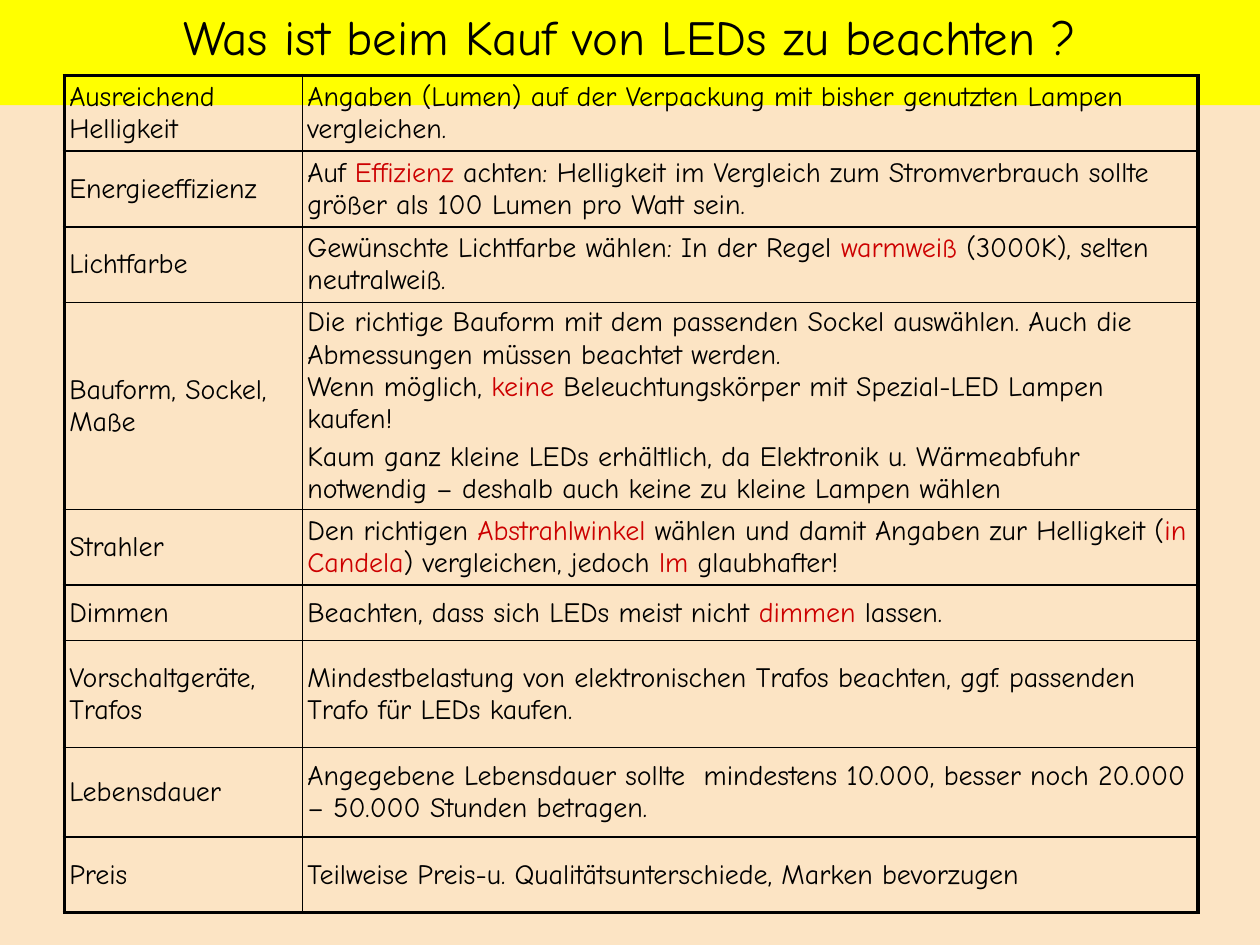
"""Build a one-slide German checklist for buying LED lamps."""
import copy
import dataclasses

import pptx
import pptx.dml.color
import pptx.enum.text
import pptx.oxml
import pptx.oxml.ns
import pptx.util


@dataclasses.dataclass(frozen=True)
class Theme:
    """Hold the colours, type sizes and line widths of the slide."""
    font: str = "Comic Neue"
    title_size: float = 28
    body_size: float = 16
    paragraph_gap: float = 3.2
    background: str = "FCE4C4"
    banner: str = "FFFF00"
    text: str = "000000"
    emphasis: str = "CC0000"
    outer_line: float = 2.25
    inner_line: float = 1


THEME = Theme()
SLIDE_WIDTH = pptx.util.Inches(10)
SLIDE_HEIGHT = pptx.util.Inches(7.5)
CELL_MARGIN = pptx.util.Inches(0.04)
COLUMN_SHARES = (18.9, 71.1)
ROW_SHARES = (8, 8, 8, 8, 8, 5.87, 11.33, 9.47, 8)
TITLE = "Was ist beim Kauf von LEDs zu beachten ?"
CHECKLIST = (
    ("Ausreichend Helligkeit",
     ["Angaben (Lumen) auf der Verpackung mit bisher genutzten Lampen vergleichen."]),
    ("Energieeffizienz",
     ["Auf *Effizienz *achten: Helligkeit im Vergleich zum Stromverbrauch sollte "
      "größer als 100 Lumen pro Watt sein."]),
    ("Lichtfarbe",
     ["Gewünschte Lichtfarbe wählen: In der Regel *warmweiß *(3000K), selten neutralweiß."]),
    ("Bauform, Sockel, Maße",
     ["Die richtige Bauform mit dem passenden Sockel auswählen. Auch die Abmessungen "
      "müssen beachtet werden. \nWenn möglich, *keine *Beleuchtungskörper mit "
      "Spezial-LED Lampen kaufen!",
      "Kaum ganz kleine LEDs erhältlich, da Elektronik u. Wärmeabfuhr notwendig – "
      "deshalb auch keine zu kleine Lampen wählen"]),
    ("Strahler",
     ["Den richtigen *Abstrahlwinkel* wählen und damit Angaben zur Helligkeit "
      "(*in Candela*) vergleichen, jedoch *lm *glaubhafter!"]),
    ("Dimmen", ["Beachten, dass sich LEDs meist nicht *dimmen *lassen."]),
    ("Vorschaltgeräte, Trafos",
     ["Mindestbelastung von elektronischen Trafos beachten, ggf. passenden Trafo "
      "für LEDs kaufen."]),
    ("Lebensdauer",
     ["Angegebene Lebensdauer sollte  mindestens 10.000, besser noch 20.000 – "
      "50.000 Stunden betragen."]),
    ("Preis", ["Teilweise Preis-u. Qualitätsunterschiede, Marken bevorzugen"]),
)


def across(percent):
    """Return a percentage of the slide width."""
    return round(SLIDE_WIDTH * percent / 100)


def down(percent):
    """Return a percentage of the slide height."""
    return round(SLIDE_HEIGHT * percent / 100)


def set_fill(fill, colour):
    """Make a fill solid in the given colour."""
    fill.solid()
    fill.fore_color.rgb = pptx.dml.color.RGBColor.from_string(colour)


def style_font(font, size, colour):
    """Apply the theme font with a size and a colour."""
    font.name = THEME.font
    font.size = pptx.util.Pt(size)
    font.color.rgb = pptx.dml.color.RGBColor.from_string(colour)


def add_title(slide):
    """Turn the title placeholder into the banner across the top."""
    title = slide.shapes.title
    title.left, title.top, title.width, title.height = 0, 0, SLIDE_WIDTH, down(7.6)
    set_fill(title.fill, THEME.banner)
    frame = title.text_frame
    frame.text = TITLE
    frame.word_wrap = True
    frame.auto_size = pptx.enum.text.MSO_AUTO_SIZE.SHAPE_TO_FIT_TEXT
    frame.vertical_anchor = pptx.enum.text.MSO_ANCHOR.TOP
    paragraph = frame.paragraphs[0]
    paragraph.alignment = pptx.enum.text.PP_ALIGN.CENTER
    style_font(paragraph.runs[0].font, THEME.title_size, THEME.text)


def write_paragraph(paragraph, marked_text):
    """Write text whose parts between asterisks are emphasised."""
    for part_index, part in enumerate(marked_text.split("*")):
        colour = THEME.emphasis if part_index % 2 else THEME.text
        for line_index, line in enumerate(part.split("\n")):
            if line_index:
                paragraph.add_line_break()
                line_break = paragraph._p.findall(pptx.oxml.ns.qn("a:br"))[-1]
                line_break.append(copy.deepcopy(run.font._rPr))
            run = paragraph.add_run()
            run.text = line
            style_font(run.font, THEME.body_size, colour)


def fill_cell(cell, texts):
    """Write the paragraphs of a cell and clear its fill."""
    cell.margin_left = cell.margin_right = CELL_MARGIN
    cell.margin_top = cell.margin_bottom = 0
    cell.vertical_anchor = pptx.enum.text.MSO_ANCHOR.MIDDLE
    frame = cell.text_frame
    for index, text in enumerate(texts):
        paragraph = frame.add_paragraph() if index else frame.paragraphs[0]
        if index:
            paragraph.space_before = pptx.util.Pt(THEME.paragraph_gap)
        write_paragraph(paragraph, text)


def set_borders(cell, outer_sides):
    """Draw all four borders, heavier on the outer sides."""
    properties = cell._tc.get_or_add_tcPr()
    for side in "LRTB":
        points = THEME.outer_line if side in outer_sides else THEME.inner_line
        properties.append(pptx.oxml.parse_xml(
            f'<a:ln{side} {pptx.oxml.ns.nsdecls("a")} w="{pptx.util.Pt(points)}">'
            f'<a:solidFill><a:srgbClr val="{THEME.text}"/></a:solidFill></a:ln{side}>'))
    cell.fill.background()


def add_checklist(slide):
    """Add the two-column table of buying criteria."""
    last_row = len(CHECKLIST) - 1
    graphic_frame = slide.shapes.add_table(
        len(CHECKLIST), len(COLUMN_SHARES), across(5.1), down(8),
        across(sum(COLUMN_SHARES)), down(sum(ROW_SHARES)))
    table = graphic_frame.table
    table.first_row = table.horz_banding = False
    for column, share in zip(table.columns, COLUMN_SHARES):
        column.width = across(share)
    for row_index, (topic, advice) in enumerate(CHECKLIST):
        table.rows[row_index].height = down(ROW_SHARES[row_index])
        row_sides = "T" * (row_index == 0) + "B" * (row_index == last_row)
        for column_index, texts in enumerate(([topic], advice)):
            cell = table.cell(row_index, column_index)
            fill_cell(cell, texts)
            set_borders(cell, row_sides + "LR"[column_index])
    graphic_frame.height = down(88.67)


def main():
    """Build and save the presentation."""
    presentation = pptx.Presentation()
    presentation.slide_width = SLIDE_WIDTH
    presentation.slide_height = SLIDE_HEIGHT
    slide = presentation.slides.add_slide(presentation.slide_layouts[5])
    set_fill(slide.background.fill, THEME.background)
    add_title(slide)
    add_checklist(slide)
    presentation.save("out.pptx")


if __name__ == "__main__":
    main()
